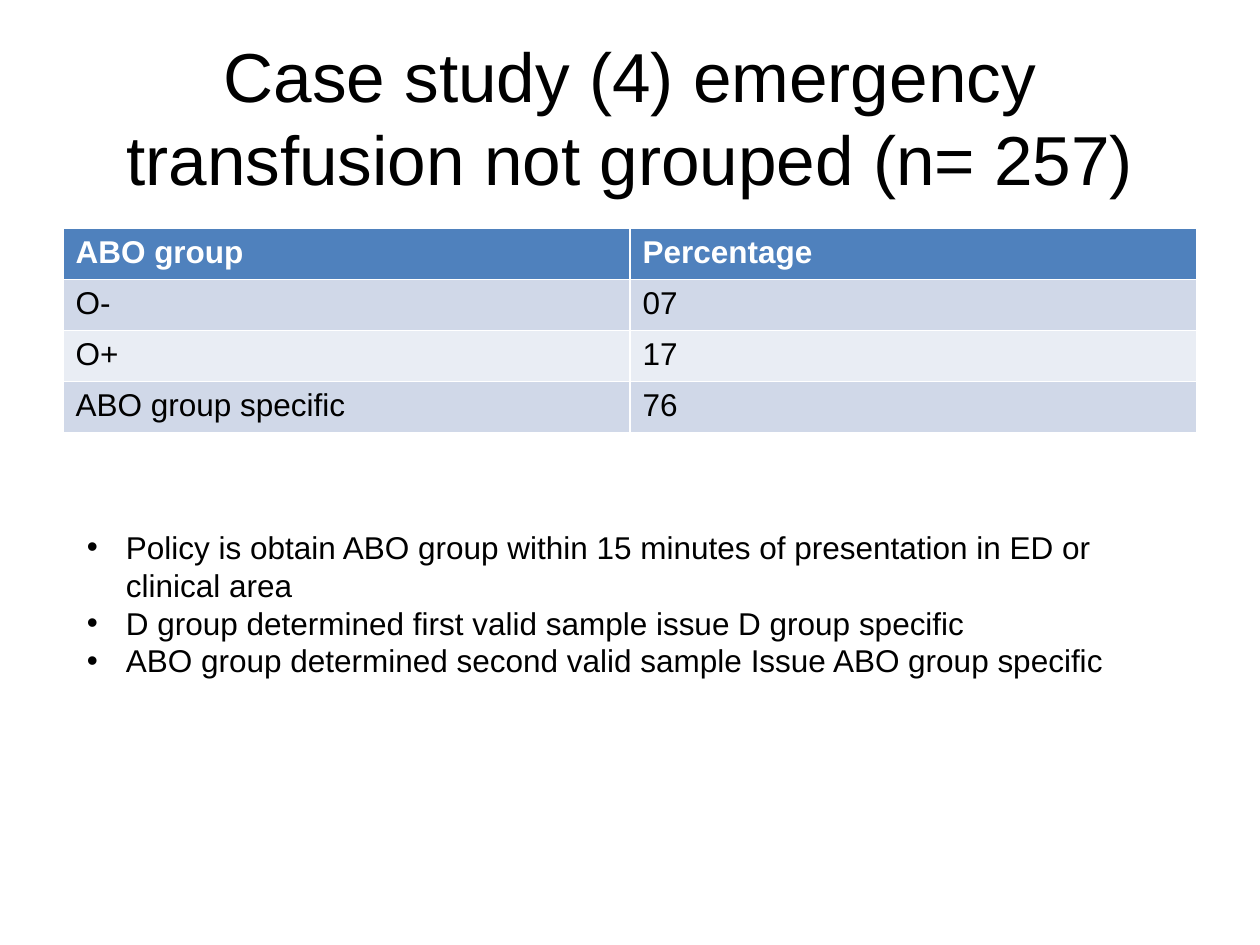
from pptx import Presentation
from pptx import util as u
from pptx.dml import color
from pptx.enum import text
from pptx.oxml import xmlchemy
from lxml import etree

FONT = "Arial"
DRAWING = "http://schemas.openxmlformats.org/drawingml/2006/main"
GROUPS = [
    ("ABO group", "Percentage"),
    ("O-", "07"),
    ("O+", "17"),
    ("ABO group specific", "76"),
]
POLICY = [
    "Policy is obtain ABO group within 15 minutes of presentation in ED or clinical area",
    "D group determined first valid sample issue D group specific",
    "ABO group determined second valid sample Issue ABO group specific",
]


def rgb(value):
    """Turn a hex string into a colour."""
    return color.RGBColor.from_string(value)


def write(paragraph, wording, size=18, ink="000000", bold=False, align=text.PP_ALIGN.LEFT):
    """Write formatted wording into a paragraph."""
    paragraph.alignment = align
    run = paragraph.add_run()
    run.text = wording
    run.font.name, run.font.size, run.font.bold = FONT, u.Pt(size), bold
    run.font.color.rgb = rgb(ink)


def add_bullet(paragraph, indent):
    """Give a paragraph a hanging bullet."""
    properties = paragraph._p.get_or_add_pPr()
    properties.set("marL", str(indent))
    properties.set("indent", str(-indent))
    etree.SubElement(properties, f"{{{DRAWING}}}buFont", typeface=FONT)
    etree.SubElement(properties, f"{{{DRAWING}}}buChar", char="•")


def place_title(slide, left, top, width, height):
    """Place and format the slide title."""
    title = slide.shapes.title
    title.left, title.top, title.width, title.height = left, top, width, height
    frame = title.text_frame
    frame.word_wrap = True
    frame.auto_size = text.MSO_AUTO_SIZE.NONE
    frame.vertical_anchor = text.MSO_ANCHOR.MIDDLE
    write(frame.paragraphs[0], "Case study (4) emergency transfusion not grouped (n= 257)",
          size=39.6, align=text.PP_ALIGN.CENTER)


def place_groups(slide, left, top, width, height):
    """Place the table of ABO groups with a header and banded rows."""
    table = slide.shapes.add_table(len(GROUPS), len(GROUPS[0]), left, top, width, height).table
    for row_number, group in enumerate(GROUPS):
        header = row_number == 0
        band = "4F81BD" if header else ("E9EDF4", "D0D8E8")[row_number % 2]
        for column_number, wording in enumerate(group):
            cell = table.cell(row_number, column_number)
            cell.fill.solid()
            cell.fill.fore_color.rgb = rgb(band)
            write(cell.text_frame.paragraphs[0], wording,
                  ink="FFFFFF" if header else "000000", bold=header)


def place_policy(slide, left, top, width, height):
    """Place the bulleted policy points."""
    frame = slide.shapes.add_textbox(left, top, width, height).text_frame
    frame.word_wrap = True
    frame.auto_size = text.MSO_AUTO_SIZE.SHAPE_TO_FIT_TEXT
    for number, point in enumerate(POLICY):
        paragraph = frame.add_paragraph() if number else frame.paragraphs[0]
        write(paragraph, point)
        add_bullet(paragraph, u.Cm(0.79))


def main():
    """Build and save the case study slide."""
    deck = Presentation()
    deck.slide_width, deck.slide_height = u.Cm(25.4), u.Cm(19.05)
    slide = deck.slides.add_slide(deck.slide_layouts[5])
    margin, content_width = u.Cm(1.27), u.Cm(22.86)
    place_title(slide, margin, u.Cm(0.76), content_width, u.Cm(3.18))
    place_groups(slide, margin, u.Cm(4.6), content_width, u.Cm(4.12))
    place_policy(slide, u.Cm(1.5), u.Cm(10.52), u.Cm(22.81), u.Cm(2.57))
    deck.save("out.pptx")


if __name__ == "__main__":
    main()
